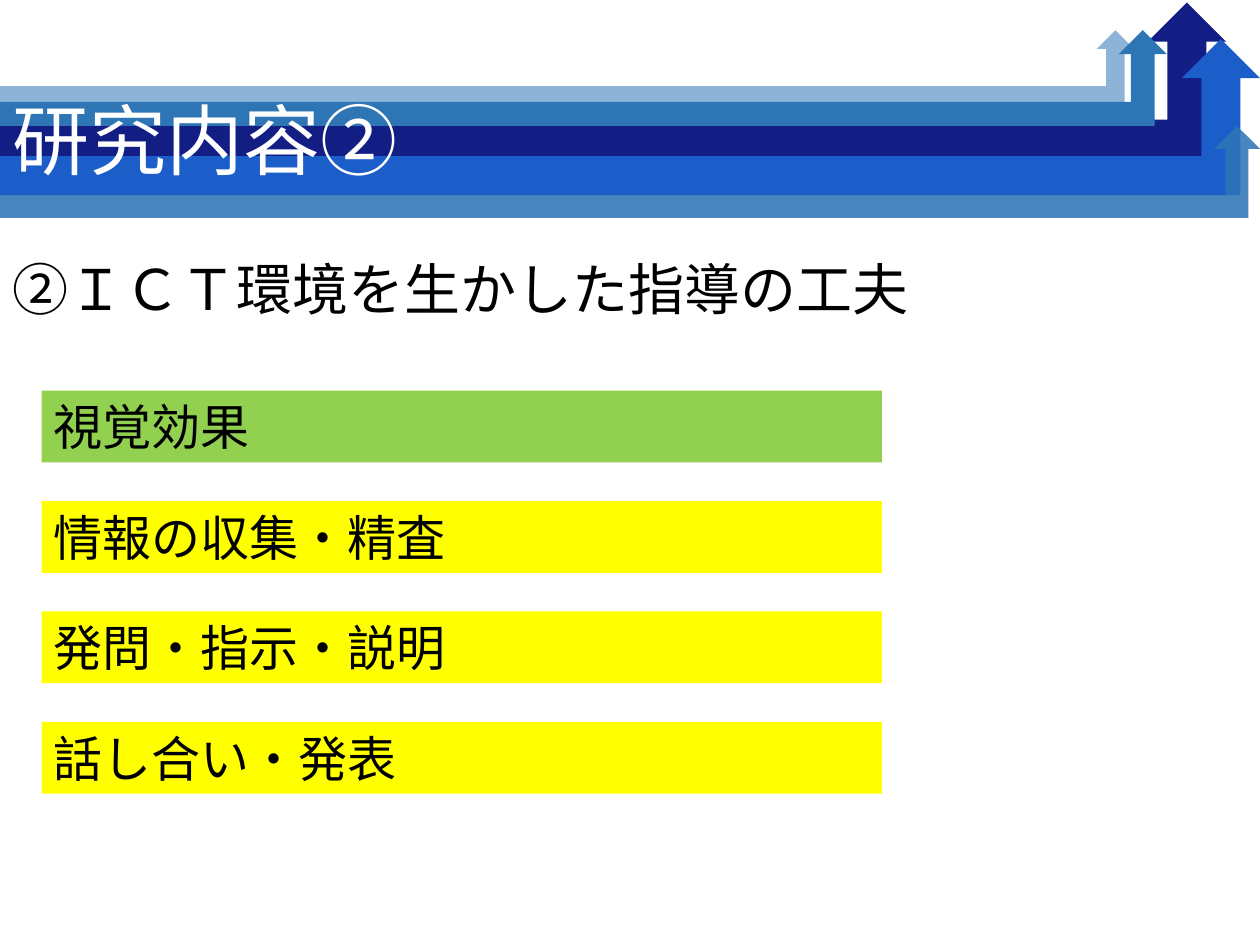
from lxml.etree import SubElement
from pptx import Presentation
from pptx.dml.color import RGBColor
from pptx.enum.shapes import MSO_SHAPE
from pptx.enum.text import MSO_ANCHOR, MSO_AUTO_SIZE, PP_ALIGN
from pptx.oxml.ns import qn
from pptx.util import Inches, Pt


def rgb(value):
    """Turn a hex string into a colour."""
    return RGBColor.from_string(value)


def write(sp, text, size, color="000000", font="Noto Sans CJK JP", anchor=MSO_ANCHOR.TOP,
          fit=MSO_AUTO_SIZE.NONE, spacing=None, before=0):
    """Put one left-aligned paragraph into a shape."""
    tf = sp.text_frame
    tf.word_wrap = True
    tf.auto_size = fit
    tf.vertical_anchor = anchor
    p = tf.paragraphs[0]
    p.alignment = PP_ALIGN.LEFT
    p.line_spacing = spacing
    p.space_before = Pt(before)
    r = p.add_run()
    r.text = text
    r.font.size = Pt(size)
    r.font.name = font
    r.font.color.rgb = rgb(color)
    SubElement(r.font._element, qn("a:ea"), typeface=font)


class Deck:
    """Hold the palette and the slide being built."""

    NAVY, BLUE, STEEL = "131E85", "1B5DC9", "2E75B6"
    GREEN, YELLOW, WHITE = "92D050", "FFFF00", "FFFFFF"

    def __init__(self):
        """Open a presentation with one title slide."""
        self.prs = Presentation()
        self.prs.slide_width, self.prs.slide_height = Inches(10), Inches(7.5)
        self.s = self.prs.slides.add_slide(self.prs.slide_layouts[0])

    def shape(self, shapes, kind, box, fill, opacity=100):
        """Add a flat filled shape without outline."""
        sp = shapes.add_shape(kind, *map(Inches, box))
        sp.shadow.inherit = False
        sp.line.fill.background()
        sp.fill.solid()
        sp.fill.fore_color.rgb = rgb(fill)
        if opacity < 100:
            color = sp.element.spPr.find(qn("a:solidFill"))[0]
            SubElement(color, qn("a:alpha"), val=str(opacity * 1000))
        return sp

    def arrows(self, items):
        """Add a group of arrows that start at the left edge."""
        group = self.s.shapes.add_group_shape()
        for top, width, height, fill, opacity in items:
            self.shape(group.shapes, MSO_SHAPE.BENT_UP_ARROW, (0, top, width, height), fill, opacity)

    def placeholder(self, idx, box, text, size, **style):
        """Fill a placeholder and bring it to the front."""
        sp = self.s.placeholders[idx]
        sp.left, sp.top, sp.width, sp.height = map(Inches, box)
        sp.element.getparent().append(sp.element)
        write(sp, text, size, spacing=0.9, **style)

    def bar(self, top, text, fill):
        """Add a labelled bar."""
        sp = self.shape(self.s.shapes, MSO_SHAPE.RECTANGLE, (0.33, top, 6.67, 0.57), fill)
        write(sp, text, 28, fit=MSO_AUTO_SIZE.SHAPE_TO_FIT_TEXT)


def main():
    """Build and save the slide."""
    deck = Deck()
    deck.arrows([
        (0.02, 9.73, 1.24, deck.NAVY, 100),
        (0.31, 10, 1.24, deck.BLUE, 100),
        (0.24, 9.26, 0.76, deck.STEEL, 100),
        (0.24, 9, 0.59, deck.STEEL, 54),
        (1, 10, 0.73, deck.STEEL, 87),
    ])
    deck.placeholder(0, (0, 0.45, 10, 1.39), "研究内容②", 44,
                     color=deck.WHITE, anchor=MSO_ANCHOR.MIDDLE)
    deck.placeholder(1, (0, 2.03, 9.73, 0.76), "②ＩＣＴ環境を生かした指導の工夫", 32, before=10)

    labels = ["視覚効果", "情報の収集・精査", "発問・指示・説明", "話し合い・発表"]
    first, last = 3.1, 5.73
    step = (last - first) / (len(labels) - 1)
    for i, label in enumerate(labels):
        deck.bar(first + i * step, label, deck.YELLOW if i else deck.GREEN)
    deck.prs.save("out.pptx")


if __name__ == "__main__":
    main()
